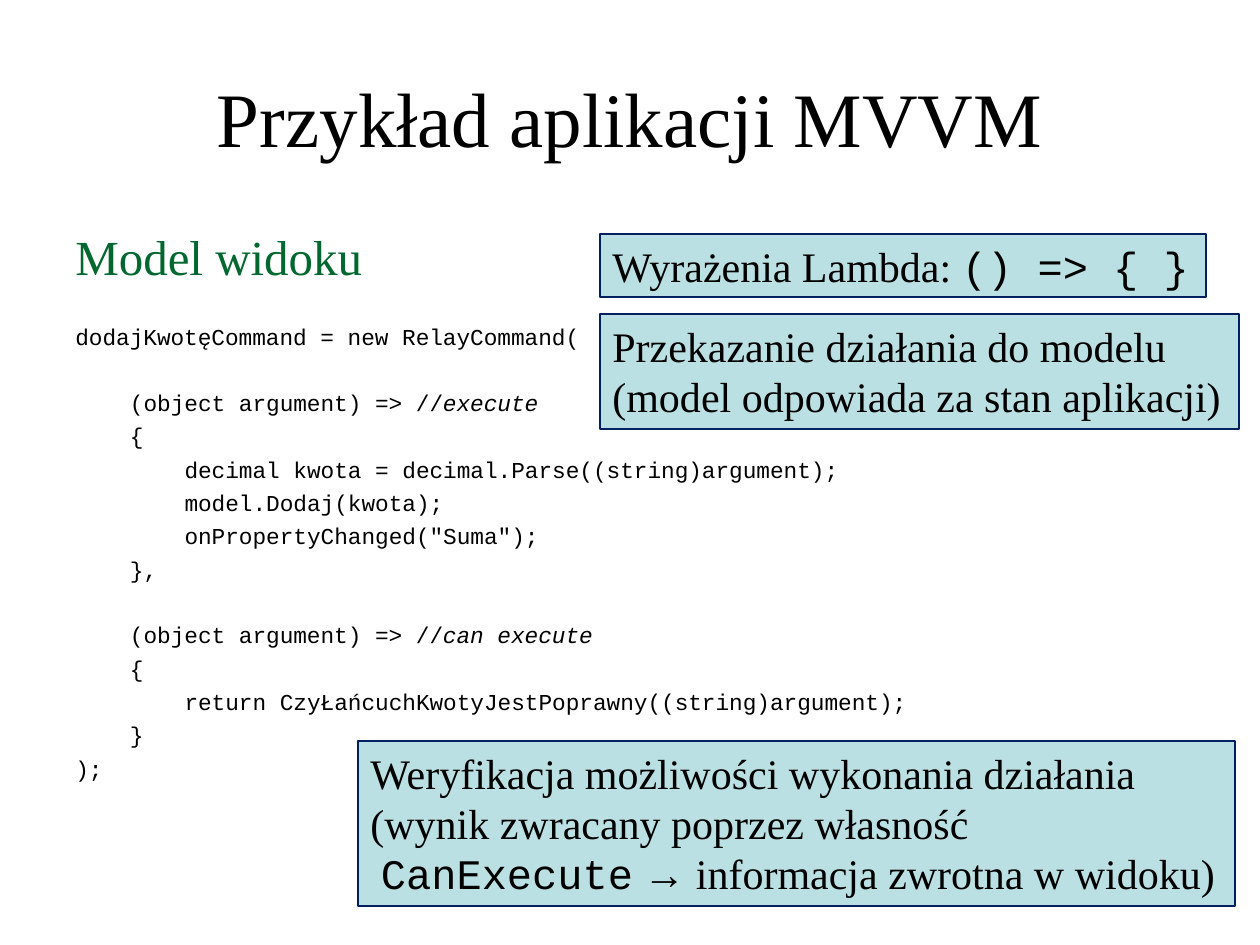
"""Builds a slide on the view model of an MVVM application."""
import pptx
import pptx.dml.color
import pptx.enum.shapes
import pptx.enum.text
import pptx.util

PX = 914400 / 126
SERIF, MONO = "Times New Roman", "Courier New"
COLORS = {"text": "000000", "heading": "00682F", "note": "BBE0E3", "border": "002060"}


def px(length):
    return pptx.util.Emu(round(length * PX))


def add_text(paragraph, text, size=24, font=SERIF, color="text", italic=False):
    run = paragraph.add_run()
    run.text = text
    run.font.size = pptx.util.Pt(size)
    run.font.name = font
    run.font.italic = italic
    run.font.color.rgb = pptx.dml.color.RGBColor.from_string(COLORS[color])


presentation = pptx.Presentation()
presentation.slide_width, presentation.slide_height = px(1260), px(945)
slide = presentation.slides.add_slide(presentation.slide_layouts[5])

title = slide.shapes.title
title.left, title.top, title.width, title.height = px(63), px(38), px(1134), px(157)
title.text_frame.vertical_anchor = pptx.enum.text.MSO_ANCHOR.MIDDLE
title.text_frame.paragraphs[0].alignment = pptx.enum.text.PP_ALIGN.CENTER
add_text(title.text_frame.paragraphs[0], "Przykład aplikacji MVVM", size=44)

listing = slide.shapes.add_textbox(px(63), px(220), px(1134), px(698)).text_frame
listing.word_wrap = True
heading = listing.paragraphs[0]
heading.space_before = pptx.util.Pt(3)
add_text(heading, "Model widoku", size=28, color="heading")

LINE_GAP, BLOCK_GAP = 3.5, 21.7
INDENT = pptx.util.Pt(31.2)
code_lines = [
    (0, BLOCK_GAP, "dodajKwotęCommand = new RelayCommand(", ""),
    (1, BLOCK_GAP, "(object argument) => //", "execute"),
    (1, LINE_GAP, "{", ""),
    (2, LINE_GAP, "decimal kwota = decimal.Parse((string)argument);", ""),
    (2, LINE_GAP, "model.Dodaj(kwota);", ""),
    (2, LINE_GAP, 'onPropertyChanged("Suma");', ""),
    (1, LINE_GAP, "},", ""),
    (1, BLOCK_GAP, "(object argument) => //", "can execute"),
    (1, LINE_GAP, "{", ""),
    (2, LINE_GAP, "return CzyŁańcuchKwotyJestPoprawny((string)argument);", ""),
    (1, LINE_GAP, "}", ""),
    (0, LINE_GAP, ");", ""),
]
for depth, gap, code, comment in code_lines:
    line = listing.add_paragraph()
    line.space_before = pptx.util.Pt(gap)
    line._p.get_or_add_pPr().set("marL", str(depth * INDENT))
    add_text(line, code, size=13, font=MONO)
    if comment:
        add_text(line, comment, size=13, font=MONO, italic=True)

notes = [
    ((600, 314, 639, 115), [
        [("Przekazanie działania do modelu", SERIF)],
        [("(model odpowiada za stan aplikacji)", SERIF)],
    ]),
    ((358, 741, 877, 165), [
        [("Weryfikacja możliwości wykonania działania", SERIF)],
        [("(wynik zwracany poprzez własność", SERIF)],
        [(" ", SERIF), ("CanExecute", MONO), (" → informacja zwrotna w widoku)", SERIF)],
    ]),
    ((600, 234, 606, 63), [
        [("Wyrażenia Lambda: ", SERIF), ("() => { }", MONO)],
    ]),
]
for bounds, note_lines in notes:
    note = slide.shapes.add_shape(pptx.enum.shapes.MSO_SHAPE.RECTANGLE, *map(px, bounds))
    note.shadow.inherit = False
    note.fill.solid()
    note.fill.fore_color.rgb = pptx.dml.color.RGBColor.from_string(COLORS["note"])
    note.line.color.rgb = pptx.dml.color.RGBColor.from_string(COLORS["border"])
    note.line.width = pptx.util.Pt(0.75)
    note.text_frame.word_wrap = False
    note.text_frame.auto_size = pptx.enum.text.MSO_AUTO_SIZE.SHAPE_TO_FIT_TEXT
    note.text_frame.vertical_anchor = pptx.enum.text.MSO_ANCHOR.TOP
    for index, pieces in enumerate(note_lines):
        line = note.text_frame.add_paragraph() if index else note.text_frame.paragraphs[0]
        line.alignment = pptx.enum.text.PP_ALIGN.LEFT
        for text, font in pieces:
            add_text(line, text, font=font)

presentation.save("out.pptx")
